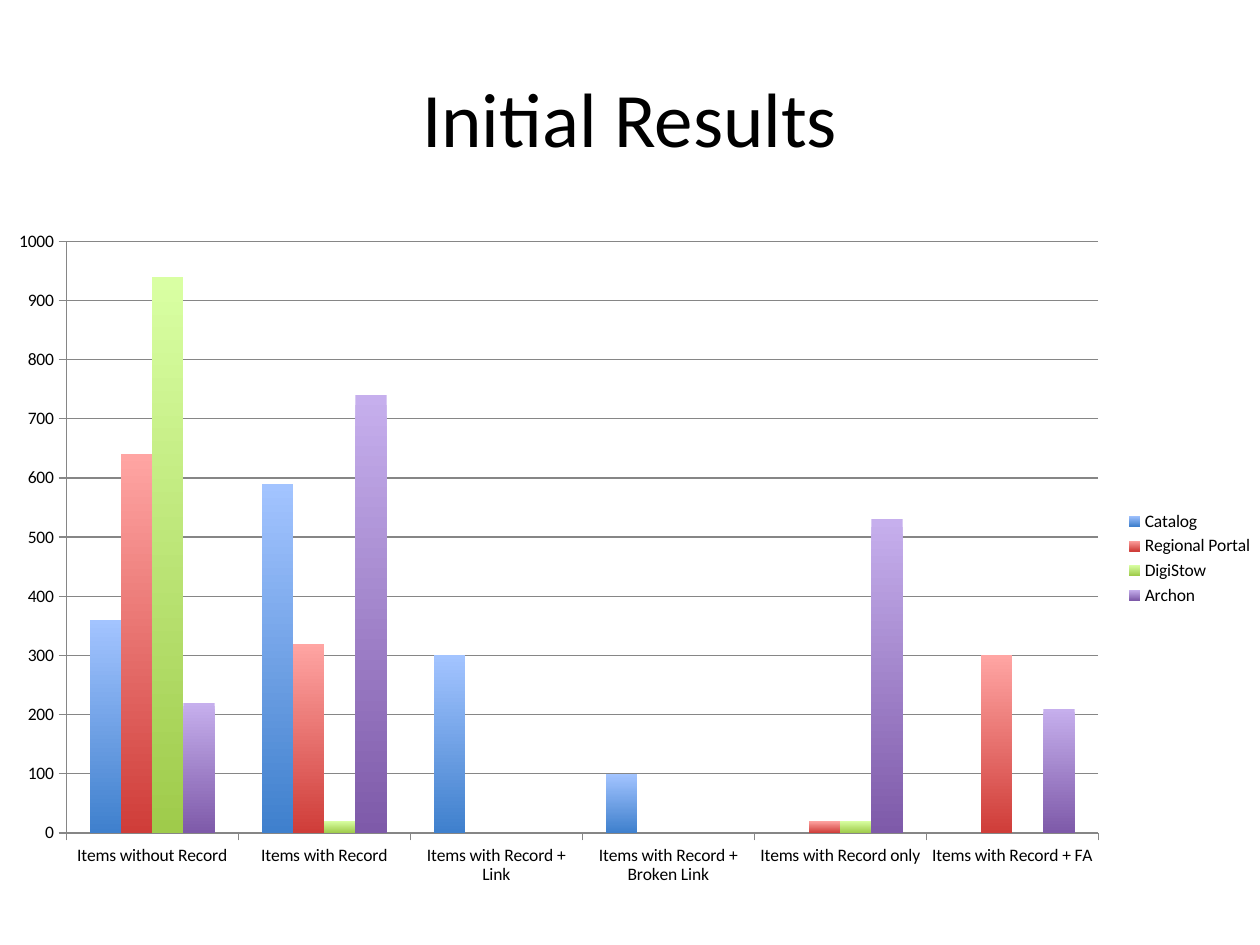
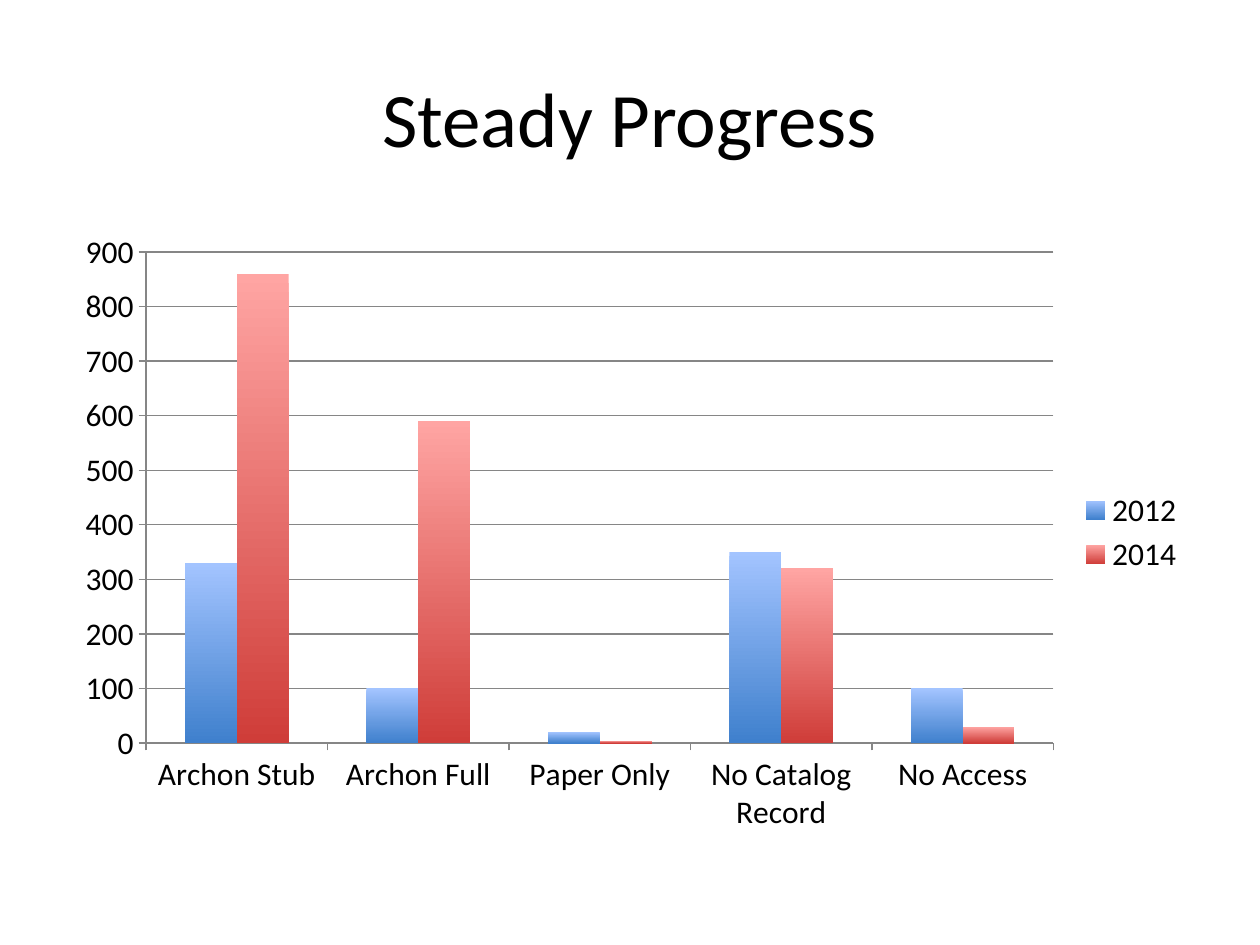
from pptx import Presentation
from pptx.chart.data import CategoryChartData
from pptx.dml.color import RGBColor
from pptx.enum.chart import XL_CHART_TYPE as ChartType, XL_LEGEND_POSITION as LegendPos
from pptx.enum.chart import XL_TICK_MARK as TickMark
from pptx.enum.text import MSO_ANCHOR as Anchor, PP_ALIGN as Align
from pptx.util import Inches, Pt

FONT = "Calibri"
COLORS = {"text": "000000", "background": "FFFFFF", "axis": "868686",
          "blue_top": "A3C4FF", "blue_bottom": "3F80CD",
          "red_top": "FFA5A3", "red_bottom": "CF3D39",
          "green_top": "D9FFA3", "green_bottom": "9FCB4B",
          "purple_top": "C6AFED", "purple_bottom": "7E5AA9"}
BAR_HUES = ("blue", "red", "green", "purple")
TITLE_BOX = (0.5, 0.3, 9, 1.25)

INITIAL_RESULTS = {
    "title": "Initial Results", "box": (-0.05, 1.73, 10.1, 5.4), "size": 10, "top": 1000,
    "categories": ["Items without Record", "Items with Record", "Items with Record + Link",
                   "Items with Record + Broken Link", "Items with Record only",
                   "Items with Record + FA"],
    "series": {"Catalog": (360, 590, 300, 100, None, None),
               "Regional Portal": (640, 320, None, None, 20, 300),
               "DigiStow": (940, 20, None, None, 20, 0),
               "Archon": (220, 740, None, None, 530, 210)}}
STEADY_PROGRESS = {
    "title": "Steady Progress", "box": (0.5, 1.75, 9, 4.95), "size": 18, "top": 900,
    "categories": ["Archon Stub", "Archon Full", "Paper Only", "No Catalog Record", "No Access"],
    "series": {"2012": (330, 100, 20, 350, 100),
               "2014": (860, 590, 4, 320, 30)}}


def color(name):
    """Return the named colour of the palette."""
    return RGBColor.from_string(COLORS[name])


def style_font(font, size):
    """Give a font the shared face and colour."""
    font.name, font.size, font.bold = FONT, Pt(size), False
    font.color.rgb = color("text")


def add_text(slide, box, text, size=18, align=Align.LEFT, anchor=Anchor.TOP):
    """Add a wrapped text box with one formatted paragraph."""
    tf = slide.shapes.add_textbox(*map(Inches, box)).text_frame
    tf.word_wrap, tf.vertical_anchor = True, anchor
    p = tf.paragraphs[0]
    p.alignment = align
    r = p.add_run()
    r.text = text
    style_font(r.font, size)


def style_bars(plot):
    """Fill each series with a vertical gradient of its own hue."""
    plot.gap_width, plot.overlap, plot.vary_by_categories = 150, 0, False
    for series, hue in zip(plot.series, BAR_HUES):
        series.invert_if_negative = False
        fill = series.format.fill
        fill.gradient()
        fill.gradient_angle = 270
        for stop, end in zip(fill.gradient_stops, ("top", "bottom")):
            stop.color.rgb = color(f"{hue}_{end}")


def style_axes(chart, top):
    """Draw grey axes, outside ticks and value gridlines."""
    value_axis = chart.value_axis
    value_axis.minimum_scale, value_axis.maximum_scale, value_axis.major_unit = 0, top, 100
    value_axis.has_major_gridlines = True
    chart.category_axis.has_major_gridlines = False
    lines = [value_axis.major_gridlines.format.line]
    for axis in (value_axis, chart.category_axis):
        axis.major_tick_mark, axis.minor_tick_mark = TickMark.OUTSIDE, TickMark.NONE
        lines.append(axis.format.line)
    for line in lines:
        line.color.rgb, line.width = color("axis"), Pt(0.75)


def add_column_chart(slide, box, categories, series, size, top):
    """Add a clustered column chart with a legend on the right."""
    data = CategoryChartData(number_format="General")
    data.categories = categories
    for name, values in series.items():
        data.add_series(name, values)
    chart = slide.shapes.add_chart(ChartType.COLUMN_CLUSTERED, *map(Inches, box), data).chart
    style_font(chart.font, size)
    chart.has_title, chart.has_legend = False, True
    chart.legend.position, chart.legend.include_in_layout = LegendPos.RIGHT, False
    style_bars(chart.plots[0])
    style_axes(chart, top)


def add_chart_slide(prs, title, **chart):
    """Add a slide with a centred title above one column chart."""
    slide = prs.slides.add_slide(prs.slide_layouts[6])
    fill = slide.background.fill
    fill.solid()
    fill.fore_color.rgb = color("background")
    add_text(slide, TITLE_BOX, title, size=44, align=Align.CENTER, anchor=Anchor.MIDDLE)
    add_column_chart(slide, **chart)


def main():
    """Build and save the presentation."""
    prs = Presentation()
    prs.slide_width, prs.slide_height = Inches(10), Inches(7.5)
    for content in (INITIAL_RESULTS, STEADY_PROGRESS):
        add_chart_slide(prs, **content)
    prs.save("out.pptx")


if __name__ == "__main__":
    main()
